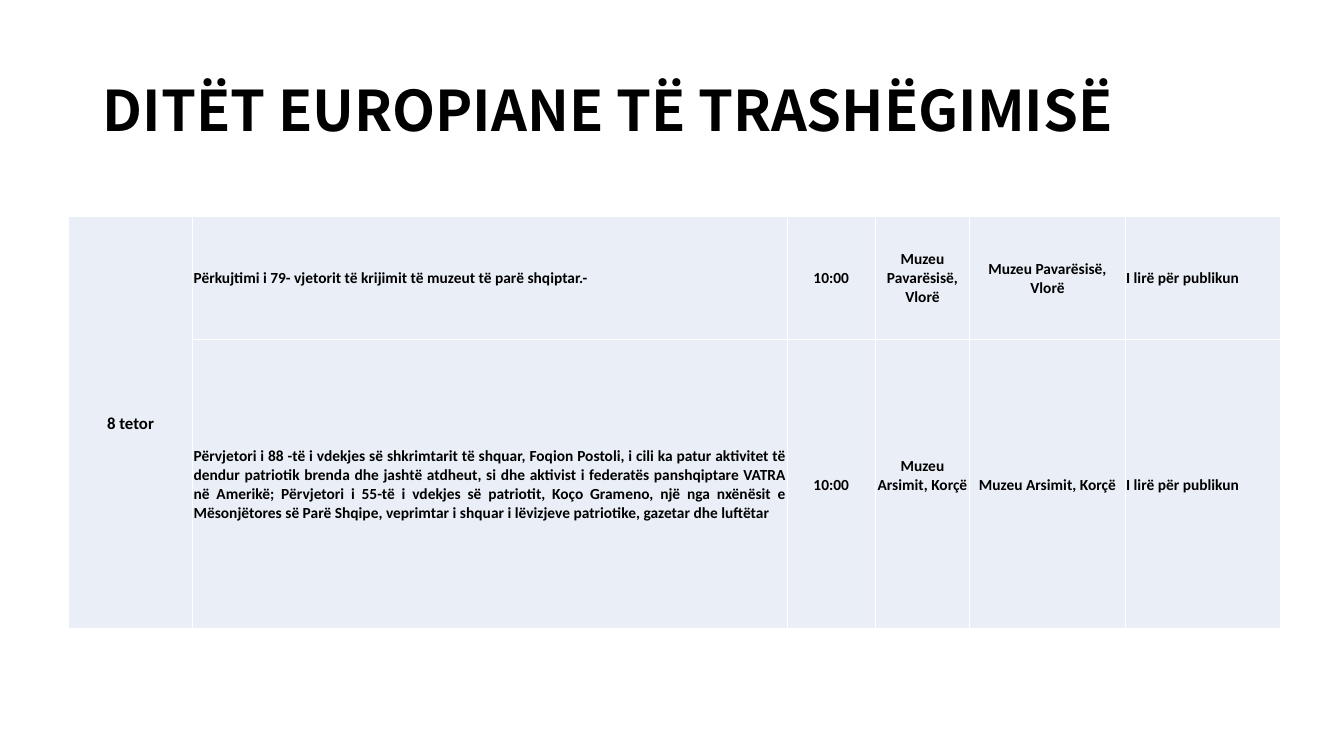
"""Build the programme slide for the European Heritage Days."""
from lxml import etree
from pptx import Presentation
from pptx import util as u
from pptx.dml.color import RGBColor
from pptx.enum import text
from pptx.oxml import ns

TITLE = "DITËT EUROPIANE TË TRASHËGIMISË"
DAY = "8 tetor"
EVENTS = [
    ("Përkujtimi i 79- vjetorit të krijimit të muzeut të parë shqiptar.-",
     "10:00", "Muzeu Pavarësisë, Vlorë", "Muzeu Pavarësisë, Vlorë",
     "I lirë për publikun"),
    ("Përvjetori i 88 -të i vdekjes së shkrimtarit të shquar, Foqion Postoli, "
     "i cili ka patur aktivitet të dendur patriotik brenda dhe jashtë atdheut, "
     "si dhe aktivist i federatës panshqiptare VATRA në Amerikë; Përvjetori i "
     "55-të i vdekjes së patriotit, Koço Grameno, një nga nxënësit e "
     "Mësonjëtores së Parë Shqipe, veprimtar i shquar i lëvizjeve patriotike, "
     "gazetar dhe luftëtar",
     "10:00", "Muzeu Arsimit, Korçë", "Muzeu Arsimit, Korçë",
     "I lirë për publikun"),
]

THEME = {
    "ink": "000000", "cell": "EAEFF7", "border": "FFFFFF",
    "title_font": "Noto Sans CJK KR", "body_font": "Calibri",
    "title_size": 40, "day_size": 12, "body_size": 11, "border_width": 1,
}

PX = 9144
PAGE_SIZE = (1333, 750)
TITLE_BOX = (92, 40, 1150, 145)
TABLE_AT = (68, 215)
COLUMNS = [123, 590, 87, 94, 154, 154]
ROWS = [122, 287]
CELL_INSET = 1
RAISED_CELL, RAISED_INSET = (1, 3), 19

ALIGN = text.PP_ALIGN
ALIGNMENTS = [ALIGN.CENTER, ALIGN.JUSTIFY, ALIGN.CENTER, ALIGN.CENTER,
              ALIGN.CENTER, ALIGN.LEFT]


def px(*lengths):
    return [u.Emu(length * PX) for length in lengths]


def write(para, words, font, size):
    span = para.add_run()
    span.text = words
    span.font.name = font
    span.font.size = u.Pt(size)
    span.font.bold = True
    span.font.color.rgb = RGBColor.from_string(THEME["ink"])


def add_title(page):
    box = page.shapes.add_textbox(*px(*TITLE_BOX))
    frame = box.text_frame
    frame.word_wrap = True
    frame.vertical_anchor = text.MSO_ANCHOR.MIDDLE
    para = frame.paragraphs[0]
    para.line_spacing = 0.9
    write(para, TITLE, THEME["title_font"], THEME["title_size"])


def style_cell(cell, bottom):
    properties = cell._tc.get_or_add_tcPr()
    for side in ("a:lnL", "a:lnR", "a:lnT", "a:lnB"):
        line = etree.SubElement(properties, ns.qn(side),
                                w=str(u.Pt(THEME["border_width"])))
        paint = etree.SubElement(line, ns.qn("a:solidFill"))
        etree.SubElement(paint, ns.qn("a:srgbClr"), val=THEME["border"])
    cell.fill.solid()
    cell.fill.fore_color.rgb = RGBColor.from_string(THEME["cell"])
    cell.vertical_anchor = text.MSO_ANCHOR.MIDDLE
    cell.margin_left, cell.margin_right, cell.margin_top, cell.margin_bottom = px(
        CELL_INSET, CELL_INSET, CELL_INSET, bottom)


def add_programme(page):
    table = page.shapes.add_table(
        len(ROWS), len(COLUMNS), *px(*TABLE_AT, sum(COLUMNS), sum(ROWS))).table
    table.first_row = table.horz_banding = False
    for column, width in zip(table.columns, px(*COLUMNS)):
        column.width = width
    for row, height in zip(table.rows, px(*ROWS)):
        row.height = height
    table.cell(0, 0).merge(table.cell(len(ROWS) - 1, 0))
    for r, event in enumerate(EVENTS):
        for c, words in enumerate((DAY, *event)):
            cell = table.cell(r, c)
            style_cell(cell, RAISED_INSET if (r, c) == RAISED_CELL else 0)
            if cell.is_spanned:
                continue
            para = cell.text_frame.paragraphs[0]
            para.alignment = ALIGNMENTS[c]
            size = THEME["body_size"] if c else THEME["day_size"]
            write(para, words, THEME["body_font"], size)


def main():
    deck = Presentation()
    deck.slide_width, deck.slide_height = px(*PAGE_SIZE)
    page = deck.slides.add_slide(deck.slide_layouts[6])
    add_title(page)
    add_programme(page)
    deck.save("out.pptx")


if __name__ == "__main__":
    main()
